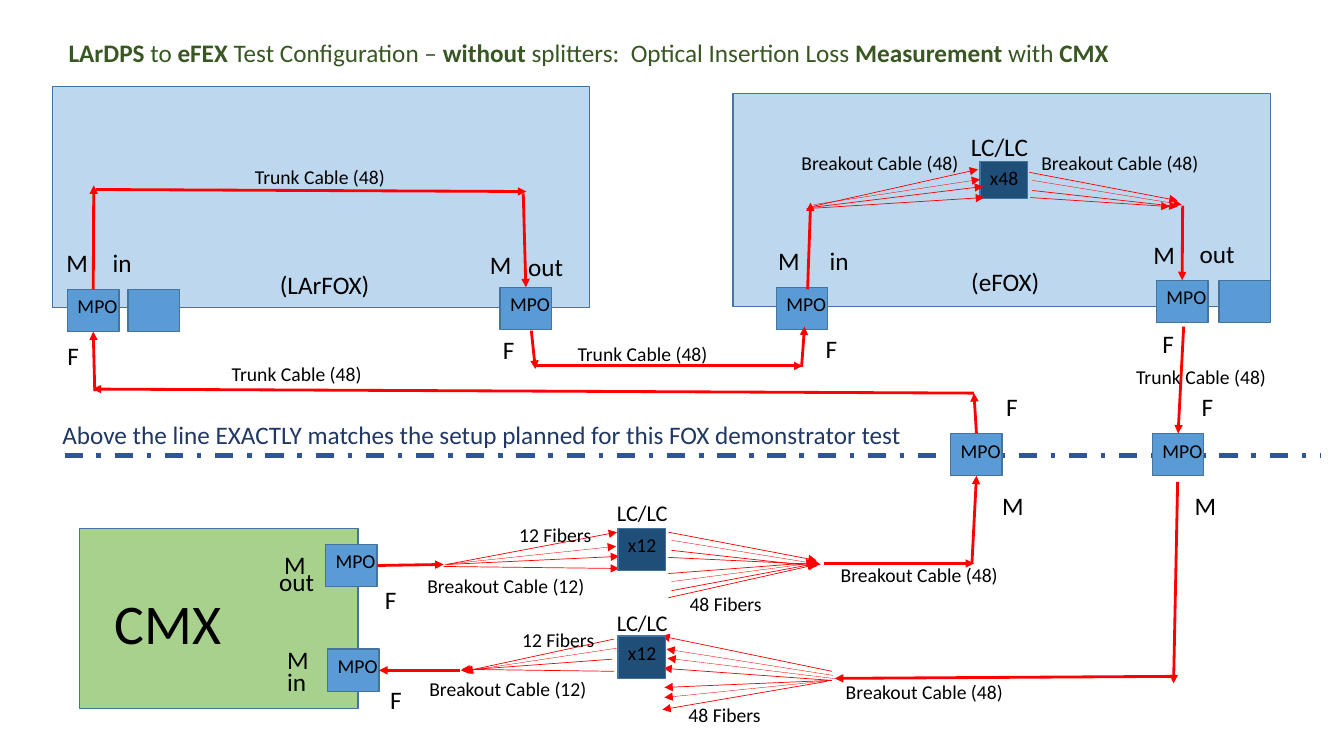
"""Draw the optical insertion loss test configuration without splitters."""
from lxml import etree
from pptx import Presentation
from pptx import util as u
from pptx.dml.color import RGBColor
from pptx.enum import dml, shapes, text
from pptx.oxml import ns

RED, BLACK, NAVY, GREEN = "FF0000", "000000", "203864", "385723"
PALE_BLUE, PORT_BLUE, COUPLER_BLUE, CMX_GREEN = "BDD7EE", "5B9BD5", "1F4E79", "A9D18E"
TOP, LEFT, BOTTOM, RIGHT = range(4)
LINE_HEIGHT = {14: 0.34, 16: 0.37, 18: 0.4, 40: 0.77}

TITLE = [("LArDPS", True), (" to ", False), ("eFEX", True),
         (" Test Configuration – ", False), ("without", True),
         (" splitters:  Optical Insertion Loss ", False),
         ("Measurement", True), (" with ", False), ("CMX", True)]

MPO_PORTS = {
    "fox_in": (0.67, 2.87), "fox_out": (4.96, 2.85),
    "efox_in": (7.7, 2.85), "efox_out": (11.47, 2.78),
    "line_up": (9.43, 4.3), "line_down": (11.43, 4.3),
    "cmx_out": (3.23, 5.4), "cmx_in": (3.25, 6.44),
}
SPARE_PORTS = [(1.27, 2.87), (12.09, 2.78)]
COUPLERS = [("x48", 9.72, 1.6, 0.37), ("x12", 6.13, 5.24, 0.42), ("x12", 6.13, 6.31, 0.42)]

LOWER_FANS = [
    [(6.66, 5.36, 8.14, 5.6), (6.66, 5.46, 8.1, 5.62),
     (6.63, 5.28, 8.1, 5.56), (6.63, 5.53, 8.11, 5.6)],
    [(6.66, 5.77, 8.11, 5.58), (6.66, 5.86, 8.1, 5.59),
     (6.63, 5.69, 8.08, 5.58), (6.63, 5.93, 8.1, 5.6)],
    [(8.26, 6.7, 6.61, 6.44), (8.25, 6.75, 6.58, 6.63), (8.25, 6.66, 6.56, 6.31)],
    [(8.34, 6.74, 6.62, 6.53)],
    [(8.25, 6.75, 6.59, 6.92), (8.2, 6.76, 6.57, 7.04), (8.24, 6.75, 6.59, 6.82)],
    [(4.41, 5.6, 6.11, 5.42), (4.43, 5.6, 6.14, 5.52),
     (4.43, 5.6, 6.12, 5.28), (4.4, 5.62, 6.14, 5.64)],
    [(6.12, 6.43, 4.6, 6.66), (6.07, 6.54, 4.57, 6.65),
     (6.09, 6.34, 4.61, 6.66), (6.09, 6.66, 4.58, 6.64)],
]
EFOX_FANS = [
    [(8.07, 2.03, 9.72, 1.78), (8, 2.07, 9.76, 1.96),
     (8.03, 2.06, 9.75, 1.85), (8.05, 2.05, 9.7, 1.68)],
    [(10.24, 1.79, 11.72, 2.03), (10.24, 1.89, 11.68, 2.05),
     (10.21, 1.71, 11.68, 1.99), (10.22, 1.96, 11.6, 2.05)],
]

FREE_CABLES = [
    (8.17, 5.59, 9.66, 5.59), (11.68, 4.78, 11.64, 6.78), (11.66, 6.71, 8.28, 6.73),
    (0.95, 1.88, 5.22, 1.9), (8.01, 2.87, 8.04, 2.01), (5.27, 3.28, 5.31, 3.66),
    (5.31, 3.63, 7.96, 3.63), (9.66, 3.9, 0.92, 3.86), (7.95, 3.64, 7.98, 3.24),
]
CABLES_FROM_PORT = [
    ((0.92, 2.87, 0.93, 1.84), "fox_in", TOP),
    ((9.68, 4.3, 9.66, 3.9), "line_up", TOP),
    ((3.74, 5.61, 4.4, 5.6), "cmx_out", RIGHT),
]
CABLES_TO_PORT = [
    ((0.94, 3.88, 0.92, 3.29), "fox_in", BOTTOM),
    ((5.19, 1.92, 5.21, 2.85), "fox_out", TOP),
    ((11.73, 2.04, 11.72, 2.78), "efox_out", TOP),
    ((11.74, 3.24, 11.72, 4.3), "line_down", TOP),
    ((9.64, 5.59, 9.68, 4.72), "line_up", BOTTOM),
    ((4.56, 6.65, 3.76, 6.65), "cmx_in", RIGHT),
]

LABELS = [
    ("M", 18, 0.48, [(0.56, 2.4), (4.76, 2.42), (7.62, 2.38), (11.34, 2.33),
                     (9.84, 4.82), (11.75, 4.82), (2.72, 5.4), (2.75, 6.34)]),
    ("F", 18, 0.56, [(0.57, 3.33), (4.89, 3.27), (8.09, 3.26), (11.43, 3.21),
                     (9.88, 3.83), (11.82, 3.83), (3.72, 5.75), (3.77, 6.74)]),
    ("in", 18, 0.8, [(1.02, 2.4), (8.13, 2.38), (2.75, 6.56)]),
    ("out", 18, 0.79, [(5.14, 2.44), (11.8, 2.32), (2.67, 5.57)]),
    ("LC/LC", 18, 1.01, [(9.53, 1.25)]),
    ("LC/LC", 16, 1.01, [(6.02, 4.9), (6.02, 5.99)]),
    ("Trunk Cable (48)", 14, 2.09, [(2.43, 1.59), (5.63, 3.34), (11.17, 3.57), (2.2, 3.54)]),
    ("Breakout Cable (48)", 14, 2.43, [(7.85, 1.45), (10.23, 1.45), (8.24, 5.54), (8.29, 6.7)]),
    ("Breakout Cable (12)", 14, 2.43, [(4.14, 5.64), (4.16, 6.67)]),
    ("12 Fibers", 14, 1.22, [(5.05, 5.14), (5.08, 6.18)]),
    ("48 Fibers", 14, 1.42, [(6.74, 5.82), (6.73, 6.92)]),
    ("CMX", 40, 2.03, [(1.04, 5.79)]),
]


def rgb(hex_colour):
    return RGBColor.from_string(hex_colour)


class Diagram:
    font = "Calibri"
    outline = "43739E"

    def __init__(self, slide):
        self.slide = slide

    def run(self, paragraph, words, size, colour=BLACK, bold=False):
        run = paragraph.add_run()
        run.text = words
        run.font.name, run.font.size, run.font.bold = self.font, u.Pt(size), bold
        run.font.color.rgb = rgb(colour)

    def title(self, pieces, left, top, width, size, colour):
        heading = self.slide.shapes.title
        heading.left, heading.top = u.Inches(left), u.Inches(top)
        heading.width, heading.height = u.Inches(width), u.Inches(LINE_HEIGHT[size])
        frame = heading.text_frame
        frame.auto_size = text.MSO_AUTO_SIZE.NONE
        frame.vertical_anchor = text.MSO_ANCHOR.TOP
        frame.paragraphs[0].alignment = text.PP_ALIGN.LEFT
        for words, bold in pieces:
            self.run(frame.paragraphs[0], words, size, colour, bold)

    def box(self, left, top, width, height, fill, words=""):
        block = self.slide.shapes.add_shape(
            shapes.MSO_SHAPE.RECTANGLE, *map(u.Inches, (left, top, width, height)))
        block.shadow.inherit = False
        block.fill.solid()
        block.fill.fore_color.rgb = rgb(fill)
        block.line.color.rgb = rgb(self.outline)
        block.line.width = u.Pt(1)
        if words:
            frame = block.text_frame
            frame.vertical_anchor = text.MSO_ANCHOR.TOP
            frame.margin_right = 0
            frame.paragraphs[0].alignment = text.PP_ALIGN.LEFT
            self.run(frame.paragraphs[0], words, 14)
        return block

    def line(self, ends, width, colour=RED, arrow=True):
        link = self.slide.shapes.add_connector(
            shapes.MSO_CONNECTOR.STRAIGHT, *map(u.Inches, ends))
        link.line.color.rgb = rgb(colour)
        link.line.width = u.Pt(width)
        if arrow:
            etree.SubElement(link.line._get_or_add_ln(), ns.qn("a:tailEnd"), type="triangle")
        etree.SubElement(link._element.spPr, ns.qn("a:effectLst"))
        return link

    def fan(self, fibers):
        for index, ends in enumerate(fibers):
            self.line(ends, 0.5 if index else 0.25)

    def label(self, words, left, top, width, size, colour=BLACK, align=text.PP_ALIGN.LEFT):
        note = self.slide.shapes.add_textbox(
            *map(u.Inches, (left, top, width, LINE_HEIGHT[size])))
        frame = note.text_frame
        frame.word_wrap = True
        frame.auto_size = text.MSO_AUTO_SIZE.SHAPE_TO_FIT_TEXT
        frame.paragraphs[0].alignment = align
        self.run(frame.paragraphs[0], words, size, colour)


def main():
    deck = Presentation()
    deck.slide_width, deck.slide_height = u.Inches(13.33), u.Inches(7.5)
    diagram = Diagram(deck.slides.add_slide(deck.slide_layouts[5]))
    diagram.title(TITLE, 0.58, 0.32, 12, 18, GREEN)

    diagram.box(0.52, 0.86, 5.33, 2.19, PALE_BLUE)
    diagram.box(7.27, 0.93, 5.33, 2.11, PALE_BLUE)
    diagram.box(0.79, 5.24, 2.76, 1.79, CMX_GREEN)
    demarcation = diagram.line((0.64, 4.52, 13.1, 4.52), 3.25, "2F5597", arrow=False)
    demarcation.line.dash_style = dml.MSO_LINE.DASH_DOT

    for fibers in LOWER_FANS:
        diagram.fan(fibers)
    ports = {name: diagram.box(left, top, 0.51, 0.42, PORT_BLUE, "MPO")
             for name, (left, top) in MPO_PORTS.items()}
    for left, top in SPARE_PORTS:
        diagram.box(left, top, 0.51, 0.42, PORT_BLUE)
    for words, left, top, height in COUPLERS:
        diagram.box(left, top, 0.47, height, COUPLER_BLUE, words)
    for fibers in EFOX_FANS:
        diagram.fan(fibers)

    for ends in FREE_CABLES:
        diagram.line(ends, 2)
    for ends, port, side in CABLES_FROM_PORT:
        diagram.line(ends, 2).begin_connect(ports[port], side)
    for ends, port, side in CABLES_TO_PORT:
        diagram.line(ends, 2).end_connect(ports[port], side)

    for words, size, width, places in LABELS:
        for left, top in places:
            diagram.label(words, left, top, width, size)
    diagram.label("(LArFOX)", 2.31, 2.62, 1.82, 18, align=text.PP_ALIGN.CENTER)
    diagram.label("(eFOX)", 9.06, 2.59, 1.82, 18, align=text.PP_ALIGN.CENTER)
    diagram.label("Above the line EXACTLY matches the setup planned for this FOX demonstrator test",
                  0.52, 4.11, 9.45, 18, NAVY)
    deck.save("out.pptx")


if __name__ == "__main__":
    main()
